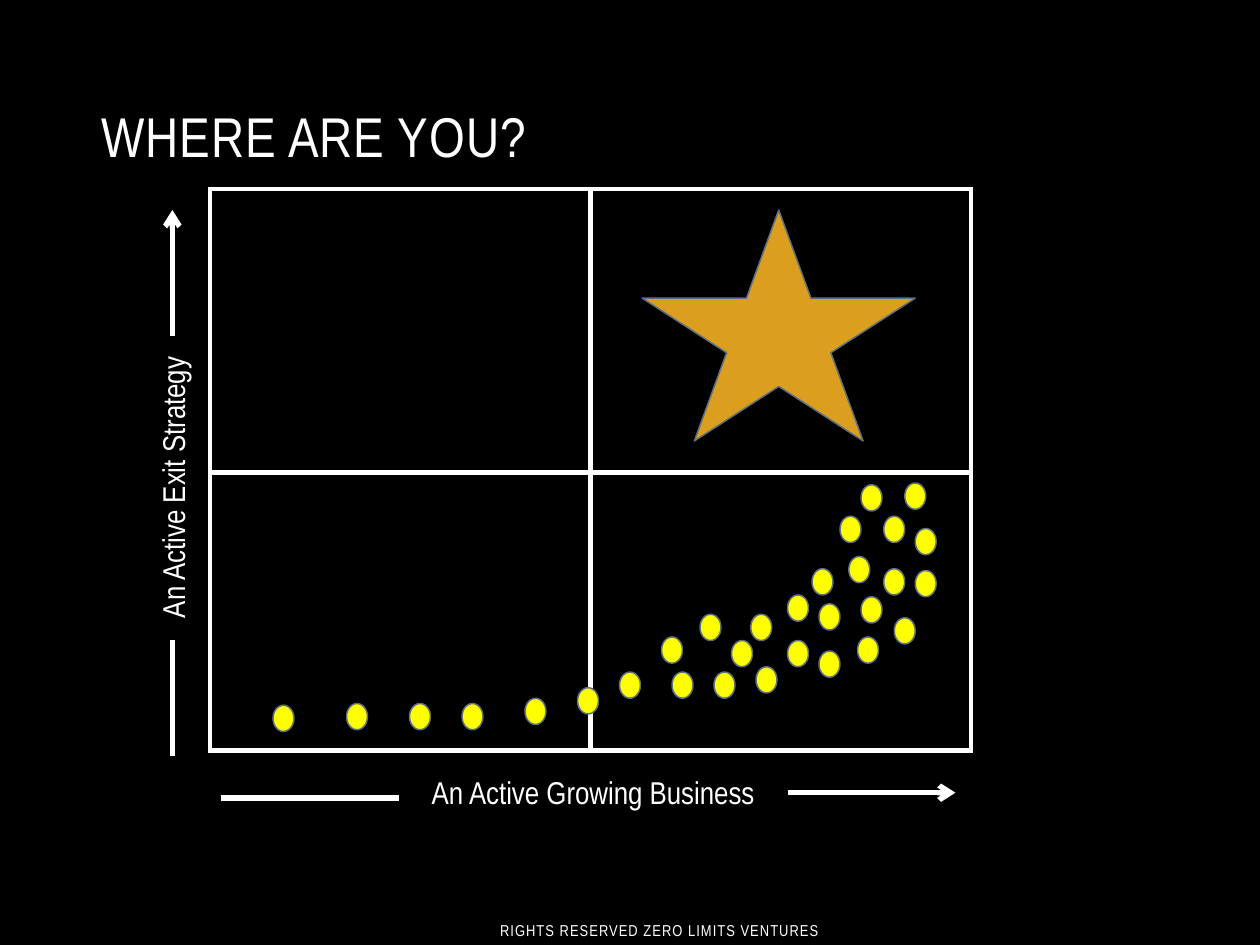
from dataclasses import dataclass, field
from typing import Any, NamedTuple

from lxml import etree
from pptx import Presentation
from pptx.dml.color import RGBColor
from pptx.enum import shapes, text
from pptx.oxml import ns, parse_xml
from pptx.util import Pt


@dataclass(frozen=True)
class Theme:
    black: str = "000000"
    white: str = "FFFFFF"
    dot: str = "FFFF00"
    star: str = "DC9E1F"
    outline: str = "5D7080"
    font: str = "Arial Narrow"
    title: float = 32
    label: float = 18
    footer: float = 9
    rule: float = 3
    thin: float = 0.85


class Box(NamedTuple):
    left: float
    top: float
    width: float
    height: float


@dataclass(frozen=True)
class Label:
    words: str
    box: Box
    size: float
    spacing: float = 0
    frame: dict[str, Any] = field(default_factory=dict)
    align: Any = text.PP_ALIGN.LEFT
    rotation: float = 0


class Line(NamedTuple):
    x1: float
    y1: float
    x2: float
    y2: float
    arrow: bool = False


class Axis(NamedTuple):
    label: Label
    lines: tuple[Line, ...]


THEME = Theme()
GROW = text.MSO_AUTO_SIZE.SHAPE_TO_FIT_TEXT
CENTER = text.PP_ALIGN.CENTER

TITLE = Label("WHERE ARE YOU?", Box(51, 30, 624, 70), THEME.title, 0.5,
              {"vertical_anchor": text.MSO_ANCHOR.BOTTOM})
FOOTER = Label("RIGHTS RESERVED ZERO LIMITS VENTURES ", Box(240, 517, 276, 29),
               THEME.footer, 0.6,
               {"vertical_anchor": text.MSO_ANCHOR.MIDDLE}, CENTER)

AXES = (
    Axis(Label("An Active Growing Business", Box(228, 438, 222, 29), THEME.label,
               frame={"auto_size": GROW}, align=CENTER),
         (Line(126, 456, 228, 456), Line(450, 453, 546, 453, True))),
    Axis(Label("An Active Exit Strategy", Box(16, 263, 165.5, 29), THEME.label,
               frame={"auto_size": GROW, "word_wrap": False}, rotation=270),
         (Line(98.5, 366, 98.5, 432), Line(98.5, 192, 98.5, 120, True))),
)

MATRIX = Box(120, 108, 435, 321)
ROW_HEIGHTS = (162, 159)
STAR = Box(367, 120, 156, 132)
DOT_WIDTH, DOT_HEIGHT = 12, 15
DOTS = (
    (300, 399), (354, 384), (330, 393), (156, 403), (234, 402), (264, 402),
    (198, 402), (468, 345), (450, 366), (408, 384), (432, 381), (384, 384),
    (429, 351), (400, 351), (378, 364), (517, 276), (468, 372), (450, 340),
    (418, 366), (505, 325), (490, 364), (492, 341), (485, 318), (464, 325),
    (523, 326), (511, 353), (492, 277), (480, 295), (505, 295), (523, 302),
)


def rgb(color: str) -> RGBColor:
    return RGBColor.from_string(color)


def points(values) -> list[Pt]:
    return [Pt(v) for v in values]


def set_all(target: Any, values: dict[str, Any]) -> None:
    for name, value in values.items():
        setattr(target, name, value)


def add_label(parent: Any, label: Label) -> None:
    sp = parent.add_textbox(*points(label.box))
    sp.rotation = label.rotation
    tf = sp.text_frame
    set_all(tf, {"word_wrap": True, **label.frame})
    p = tf.paragraphs[0]
    p.alignment = label.align
    r = p.add_run()
    r.text = label.words
    set_all(r.font, {"name": THEME.font, "size": Pt(label.size)})
    r.font.color.rgb = rgb(THEME.white)
    if label.spacing:
        r.font._element.set("spc", str(round(label.spacing * 100)))


def add_line(parent: Any, line: Line) -> None:
    sp = parent.add_connector(shapes.MSO_CONNECTOR.STRAIGHT, *points(line[:4]))
    sp.line.color.rgb = rgb(THEME.white)
    sp.line.width = Pt(THEME.rule)
    if line.arrow:
        tail = etree.SubElement(sp.line._get_or_add_ln(), ns.qn("a:tailEnd"))
        tail.set("type", "arrow")
    etree.SubElement(sp._element.spPr, ns.qn("a:effectLst"))


def add_axis(parent: Any, axis: Axis) -> None:
    group = parent.add_group_shape().shapes
    add_label(group, axis.label)
    for line in axis.lines:
        add_line(group, line)


def add_figure(parent: Any, kind: Any, box: Box, color: str) -> None:
    sp = parent.add_shape(kind, *points(box))
    sp.shadow.inherit = False
    sp.fill.solid()
    sp.fill.fore_color.rgb = rgb(color)
    sp.line.color.rgb = rgb(THEME.outline)
    sp.line.width = Pt(THEME.thin)


def add_borders(cell: Any) -> None:
    tc_pr = cell._tc.get_or_add_tcPr()
    for side in ("lnL", "lnR", "lnT", "lnB"):
        tc_pr.append(parse_xml(
            f'<a:{side} {ns.nsdecls("a")} w="{Pt(THEME.rule)}"><a:solidFill>'
            f'<a:srgbClr val="{THEME.white}"/></a:solidFill></a:{side}>'))


def add_matrix(parent: Any) -> None:
    table = parent.add_table(2, 2, *points(MATRIX)).table
    set_all(table, {"first_row": False, "horz_banding": False})
    for row, height in zip(table.rows, ROW_HEIGHTS):
        row.height = Pt(height)
    for cell in table.iter_cells():
        add_borders(cell)
        cell.fill.background()


def main() -> None:
    prs = Presentation()
    set_all(prs, {"slide_width": Pt(720), "slide_height": Pt(540)})
    s = prs.slides.add_slide(prs.slide_layouts[6])
    s.background.fill.solid()
    s.background.fill.fore_color.rgb = rgb(THEME.black)

    add_label(s.shapes, TITLE)
    add_matrix(s.shapes)
    for axis in AXES:
        add_axis(s.shapes, axis)
    dots = s.shapes.add_group_shape().shapes
    for left, top in DOTS:
        add_figure(dots, shapes.MSO_SHAPE.FLOWCHART_CONNECTOR,
                   Box(left, top, DOT_WIDTH, DOT_HEIGHT), THEME.dot)
    add_figure(s.shapes, shapes.MSO_SHAPE.STAR_5_POINT, STAR, THEME.star)
    add_label(s.shapes, FOOTER)
    prs.save("out.pptx")


if __name__ == "__main__":
    main()
